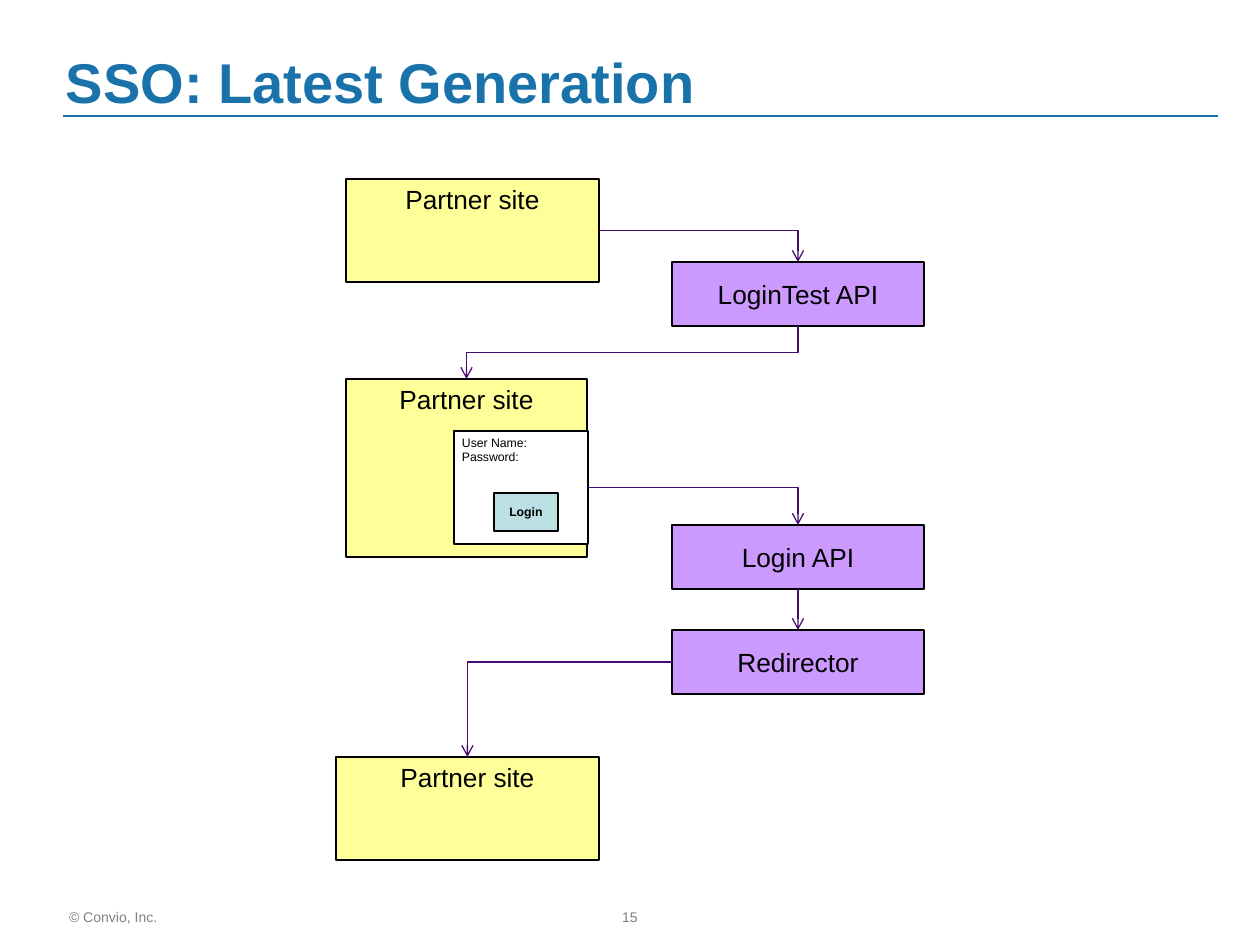
"""Builds the "SSO: Latest Generation" flow slide."""
from lxml import etree
from pptx import Presentation
from pptx.dml.color import RGBColor
from pptx.enum.shapes import MSO_CONNECTOR, MSO_SHAPE
from pptx.enum.text import MSO_ANCHOR, PP_ALIGN
from pptx.oxml.ns import qn
from pptx.util import Pt

RECT = MSO_SHAPE.RECTANGLE
STRAIGHT, ELBOW = MSO_CONNECTOR.STRAIGHT, MSO_CONNECTOR.ELBOW
LEFT, CENTER = PP_ALIGN.LEFT, PP_ALIGN.CENTER
TOP, MIDDLE, BOTTOM = MSO_ANCHOR.TOP, MSO_ANCHOR.MIDDLE, MSO_ANCHOR.BOTTOM
PX = 914400 / 126
YELLOW, PURPLE, BLUE, GREY = "FFFF99", "CC99FF", "1973AA", "808080"


def rgb(value):
    return RGBColor.from_string(value)


def add_text(text, at, fill=None, size=15, color="000000", bold=False,
             align=CENTER, anchor=TOP, inset=(8, 4, 8, 4), wrap=True):
    x, y, w, h = [round(v * PX) for v in at]
    if fill:
        sp = s.shapes.add_shape(RECT, x, y, w, h)
        sp.shadow.inherit = False
        sp.fill.solid()
        sp.fill.fore_color.rgb = rgb(fill)
        sp.line.color.rgb = rgb("000000")
        sp.line.width = Pt(0.75)
    else:
        sp = s.shapes.add_textbox(x, y, w, h)
    tf = sp.text_frame
    tf.word_wrap = wrap
    tf.vertical_anchor = anchor
    tf.margin_left, tf.margin_top, tf.margin_right, tf.margin_bottom = [
        round(v * PX) for v in inset]
    for i, line in enumerate(text.split("\n")):
        p = tf.add_paragraph() if i else tf.paragraphs[0]
        p.alignment = align
        r = p.add_run()
        r.text = line
        r.font.name = "Arial"
        r.font.size = Pt(size)
        r.font.bold = bold
        r.font.color.rgb = rgb(color)
    return sp


prs = Presentation()
prs.slide_width, prs.slide_height = round(1260 * PX), round(945 * PX)
s = prs.slides.add_slide(prs.slide_layouts[6])

add_text("© Convio, Inc.", (63, 903, 108, 30), size=8, color=GREY,
         align=LEFT, inset=(6, 6, 13, 6), wrap=False)
add_text("15", (483, 903, 294, 34), size=8, color=GREY, inset=(13, 6, 13, 6))
add_text("SSO: Latest Generation", (53, 42, 1155, 79), size=32, color=BLUE,
         bold=True, align=LEFT, anchor=BOTTOM, inset=(13, 6, 13, 6))

start = add_text("Partner site", (346, 179, 253, 103), YELLOW)
form_site = add_text("Partner site", (346, 379, 241, 178), YELLOW)
form = add_text("User Name:\nPassword:", (454, 431, 134, 113), "FFFFFF",
                size=7, align=LEFT)
add_text("Login", (494, 493, 64, 38), "BBE0E3", size=7, bold=True,
         anchor=MIDDLE)
end = add_text("Partner site", (336, 757, 263, 103), YELLOW)
login_test, login, redirector = [
    add_text(name, (672, y, 252, 64), PURPLE, anchor=MIDDLE)
    for name, y in (("LoginTest API", 262), ("Login API", 525),
                    ("Redirector", 630))]

rule = s.shapes.add_connector(STRAIGHT, *[round(v * PX) for v in (63, 116, 1218, 116)])
rule.line.color.rgb = rgb(BLUE)
rule.line.width = Pt(1)
etree.SubElement(rule._element.spPr, qn("a:effectLst"))

for a, a_side, b, preset in (
        (start, 3, login_test, "bentConnector2"),
        (login_test, 2, form_site, "bentConnector3"),
        (form, 3, login, "bentConnector2"),
        (login, 2, redirector, "line"),
        (redirector, 1, end, "bentConnector2")):
    cxn = s.shapes.add_connector(STRAIGHT if preset == "line" else ELBOW, 0, 0, 0, 0)
    cxn.begin_connect(a, a_side)
    cxn.end_connect(b, 0)
    cxn.line.color.rgb = rgb("480B6F")
    cxn.line.width = Pt(0.75)
    spPr = cxn._element.spPr
    spPr.find(qn("a:prstGeom")).set("prst", preset)
    etree.SubElement(spPr.find(qn("a:ln")), qn("a:tailEnd"), type="arrow")
    etree.SubElement(spPr, qn("a:effectLst"))
    if preset == "bentConnector3":
        w, h = cxn.width, cxn.height
        cxn.left += (w - h) // 2
        cxn.top += (h - w) // 2
        cxn.width, cxn.height = h, w
        xfrm = spPr.find(qn("a:xfrm"))
        xfrm.attrib.pop("flipH", None)
        xfrm.set("rot", "5400000")

prs.save("out.pptx")
